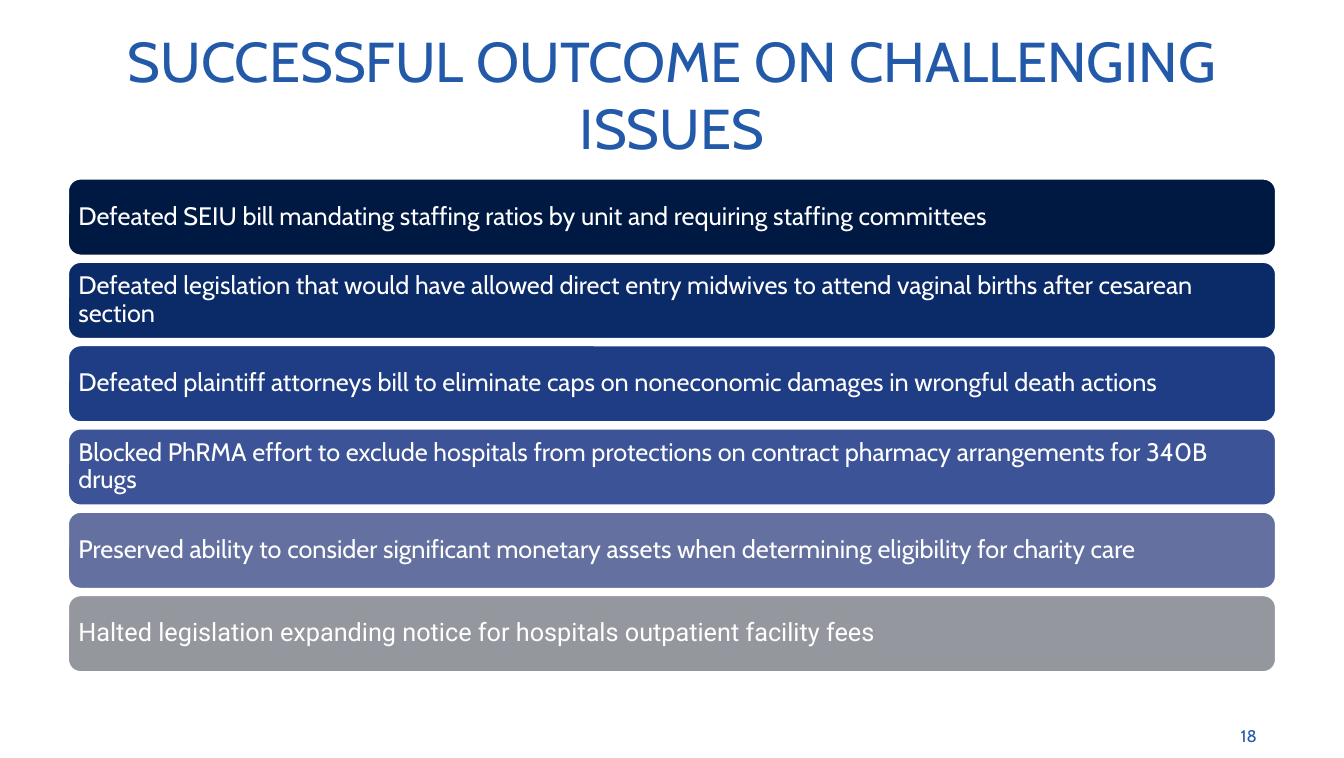
from dataclasses import dataclass

from pptx import Presentation
from pptx.dml.color import RGBColor
from pptx.enum.shapes import MSO_SHAPE
from pptx.enum.text import MSO_ANCHOR, PP_ALIGN
from pptx.shapes.base import BaseShape
from pptx.slide import Slide
from pptx.util import Pt


@dataclass(frozen=True)
class Theme:
    blue: str = "2359A9"
    white: str = "FFFFFF"
    heading_font: str = "Cabin"
    closing_font: str = "Roboto"
    title_size: float = 40
    outcome_size: float = 18
    number_size: float = 12


THEME = Theme()


@dataclass(frozen=True)
class Box:
    left: float
    top: float
    width: float
    height: float

    def lengths(self) -> tuple[Pt, Pt, Pt, Pt]:
        return Pt(self.left), Pt(self.top), Pt(self.width), Pt(self.height)


@dataclass(frozen=True)
class Outcome:
    text: str
    fill: str
    font: str = THEME.heading_font


@dataclass(frozen=True)
class Label:
    text: str
    box: Box
    size: float
    align: PP_ALIGN


SLIDE_WIDTH, SLIDE_HEIGHT = 958, 540
MARGIN = 48.2
CONTENT_WIDTH = SLIDE_WIDTH - 2 * MARGIN
FIRST_BAR_TOP, BAR_HEIGHT, BAR_PITCH = 127, 55.4, 59.35
BAR_INSET = 5

LABELS = [
    Label("SUCCESSFUL OUTCOME ON CHALLENGING ISSUES",
          Box(MARGIN, 21.6, CONTENT_WIDTH, 90), THEME.title_size, PP_ALIGN.CENTER),
    Label("18", Box(855.4, 509.8, 47.5, 28.8), THEME.number_size, PP_ALIGN.RIGHT),
]

OUTCOMES = [
    Outcome("Defeated SEIU bill mandating staffing ratios by unit and requiring "
            "staffing committees", "001942"),
    Outcome("Defeated legislation that would have allowed direct entry midwives to "
            "attend vaginal births after cesarean section", "0B2A68"),
    Outcome("Defeated plaintiff attorneys bill to eliminate caps on noneconomic "
            "damages in wrongful death actions", "1F3D84"),
    Outcome("Blocked PhRMA effort to exclude hospitals from protections on contract "
            "pharmacy arrangements for 340B drugs", "3C5497"),
    Outcome("Preserved ability to consider significant monetary assets when "
            "determining eligibility for charity care", "6471A0"),
    Outcome("Halted legislation expanding notice for hospitals outpatient facility "
            "fees", "95979F", THEME.closing_font),
]


def write_text(holder: BaseShape, text: str, font: str, size: float, color: str,
               align: PP_ALIGN, line_spacing: float = 1.0) -> None:
    frame = holder.text_frame
    frame.word_wrap = True
    frame.vertical_anchor = MSO_ANCHOR.MIDDLE
    paragraph = frame.paragraphs[0]
    paragraph.alignment = align
    paragraph.line_spacing = line_spacing
    run = paragraph.add_run()
    run.text = text
    run.font.name = font
    run.font.size = Pt(size)
    run.font.color.rgb = RGBColor.from_string(color)


def draw_label(slide: Slide, label: Label) -> None:
    holder = slide.shapes.add_textbox(*label.box.lengths())
    write_text(holder, label.text, THEME.heading_font, label.size, THEME.blue, label.align)


def draw_outcome(slide: Slide, outcome: Outcome, box: Box) -> None:
    bar = slide.shapes.add_shape(MSO_SHAPE.ROUNDED_RECTANGLE, *box.lengths())
    bar.shadow.inherit = False
    bar.fill.solid()
    bar.fill.fore_color.rgb = RGBColor.from_string(outcome.fill)
    bar.line.color.rgb = RGBColor.from_string(THEME.white)
    bar.line.width = Pt(2)
    frame = bar.text_frame
    frame.margin_left = frame.margin_right = Pt(BAR_INSET)
    frame.margin_top = frame.margin_bottom = Pt(BAR_INSET)
    write_text(bar, outcome.text, outcome.font, THEME.outcome_size, THEME.white,
               PP_ALIGN.LEFT, 0.9)


def main() -> None:
    presentation = Presentation()
    presentation.slide_width = Pt(SLIDE_WIDTH)
    presentation.slide_height = Pt(SLIDE_HEIGHT)
    slide = presentation.slides.add_slide(presentation.slide_layouts[6])
    for label in LABELS:
        draw_label(slide, label)
    for row, outcome in enumerate(OUTCOMES):
        top = FIRST_BAR_TOP + row * BAR_PITCH
        draw_outcome(slide, outcome, Box(MARGIN, top, CONTENT_WIDTH, BAR_HEIGHT))
    presentation.save("out.pptx")


if __name__ == "__main__":
    main()
